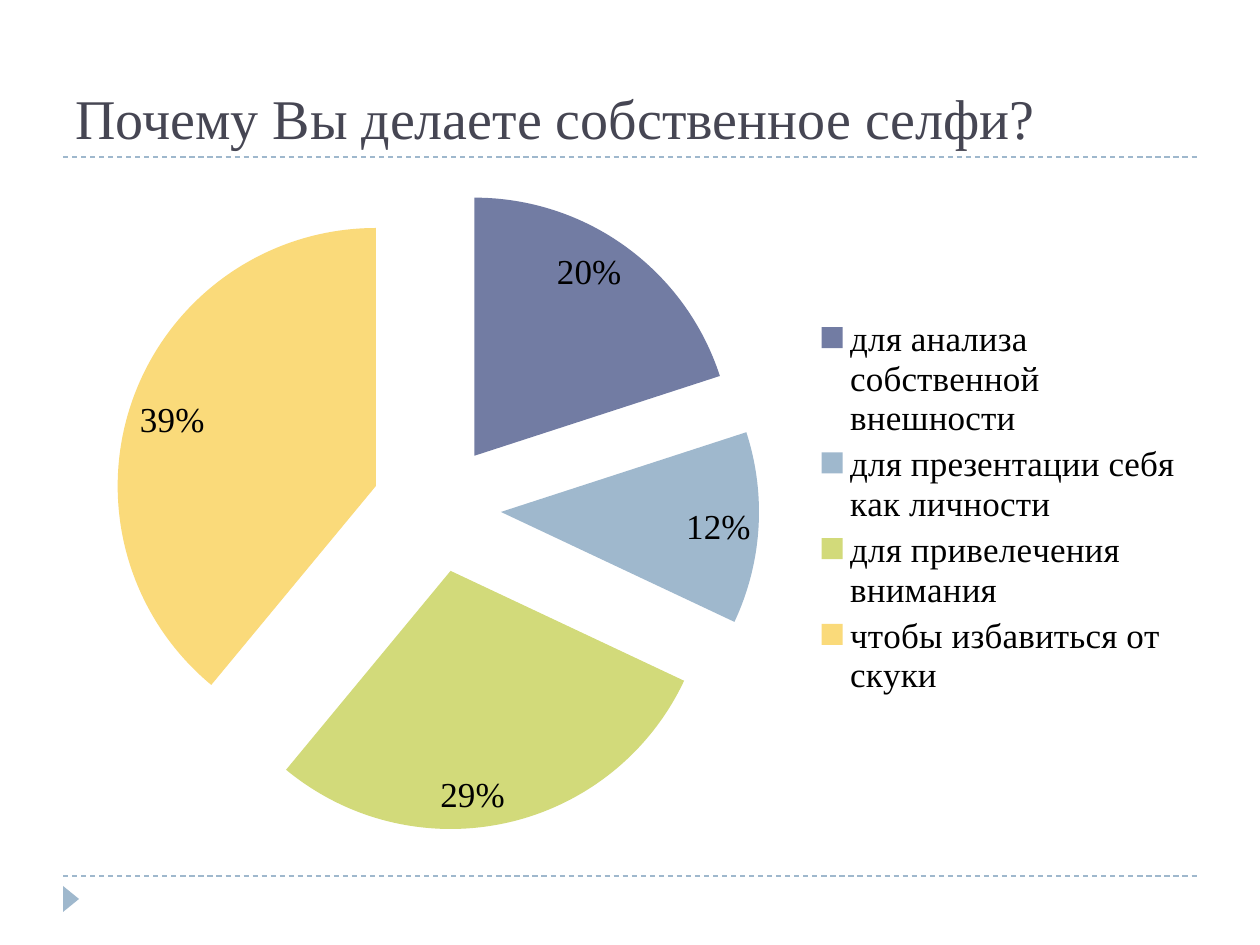
from pptx import Presentation
from pptx.chart.data import CategoryChartData
from pptx.dml.color import RGBColor
from pptx.enum.chart import (XL_CHART_TYPE as ChartType, XL_LABEL_POSITION as LabelPos,
                             XL_LEGEND_POSITION as LegendPos)
from pptx.enum.dml import MSO_LINE as Dash
from pptx.enum.shapes import MSO_CONNECTOR as Connector, MSO_SHAPE as Shape
from pptx.enum.text import MSO_ANCHOR as Anchor
from pptx.oxml import parse_xml
from pptx.oxml.ns import nsdecls, qn
from pptx.util import Pt

PX_PER_INCH = 126
SERIF = "Times New Roman"
BLACK = RGBColor(0x00, 0x00, 0x00)
TITLE_GREY = RGBColor(0x46, 0x46, 0x53)
INDIGO = RGBColor(0x72, 0x7C, 0xA3)
SKY = RGBColor(0x9F, 0xB8, 0xCD)
LIME = RGBColor(0xD2, 0xDA, 0x7A)
AMBER = RGBColor(0xFA, 0xDA, 0x7A)

LEFT, WIDTH = 63, 1134
REASONS = [
    ("для анализа собственной внешности", 20, INDIGO),
    ("для презентации себя как личности", 12, SKY),
    ("для привелечения внимания", 29, LIME),
    ("чтобы избавиться от скуки", 39, AMBER),
]


def px(length):
    return round(length * 914400 / PX_PER_INCH)


def style_font(font, size, color, name=SERIF):
    font.name = name
    font.size = Pt(size)
    font.color.rgb = color


def add_rule(slide, y):
    rule = slide.shapes.add_connector(
        Connector.STRAIGHT, px(LEFT), px(y), px(LEFT + WIDTH), px(y))
    rule.line.color.rgb = SKY
    rule.line.width = Pt(0.75)
    rule.line.dash_style = Dash.DASH
    rule._element.spPr.append(parse_xml(f"<a:effectLst {nsdecls('a')}/>"))


def add_marker(slide):
    marker = slide.shapes.add_shape(
        Shape.ISOSCELES_TRIANGLE, px(58), px(891), px(26), px(16))
    marker.rotation = 90
    marker.shadow.inherit = False
    marker.fill.solid()
    marker.fill.fore_color.rgb = SKY
    marker.line.fill.background()


def add_title(slide, text):
    title = slide.shapes.add_textbox(px(LEFT), px(21), px(WIDTH), px(136))
    frame = title.text_frame
    frame.word_wrap = True
    frame.vertical_anchor = Anchor.BOTTOM
    frame.text = text
    style_font(frame.paragraphs[0].runs[0].font, 32, TITLE_GREY)


def add_reasons_pie(slide):
    answers = CategoryChartData()
    answers.categories = [reason for reason, _, _ in REASONS]
    answers.add_series("Series 1", [share for _, share, _ in REASONS])
    chart = slide.shapes.add_chart(
        ChartType.PIE, px(LEFT), px(168), px(WIDTH), px(680), answers).chart
    chart.has_title = False
    style_font(chart.font, 18, BLACK, "Calibri")

    # Legend
    chart.has_legend = True
    chart.legend.position = LegendPos.RIGHT
    chart.legend.include_in_layout = False
    style_font(chart.legend.font, 20, BLACK)

    # Slices, pulled apart
    plot = chart.plots[0]
    plot.vary_by_categories = True
    shares = plot.series[0]
    shares._element.find(qn("c:tx")).addnext(
        parse_xml(f'<c:explosion {nsdecls("c")} val="25"/>'))
    for index, (_, _, color) in enumerate(REASONS):
        fill = shares.points[index].format.fill
        fill.solid()
        fill.fore_color.rgb = color

    # Percent labels
    labels = shares.data_labels
    labels.show_percentage = True
    labels.show_value = False
    labels.number_format = "0%"
    labels.number_format_is_linked = False
    labels.position = LabelPos.INSIDE_END
    style_font(labels.font, 20, BLACK)


def main():
    deck = Presentation()
    deck.slide_width, deck.slide_height = px(1260), px(945)
    slide = deck.slides.add_slide(deck.slide_layouts[6])

    # Frame
    for y in (876, 157):
        add_rule(slide, y)
    add_marker(slide)

    # Content
    add_reasons_pie(slide)
    add_title(slide, "Почему Вы делаете собственное селфи?")
    deck.save("out.pptx")


if __name__ == "__main__":
    main()
